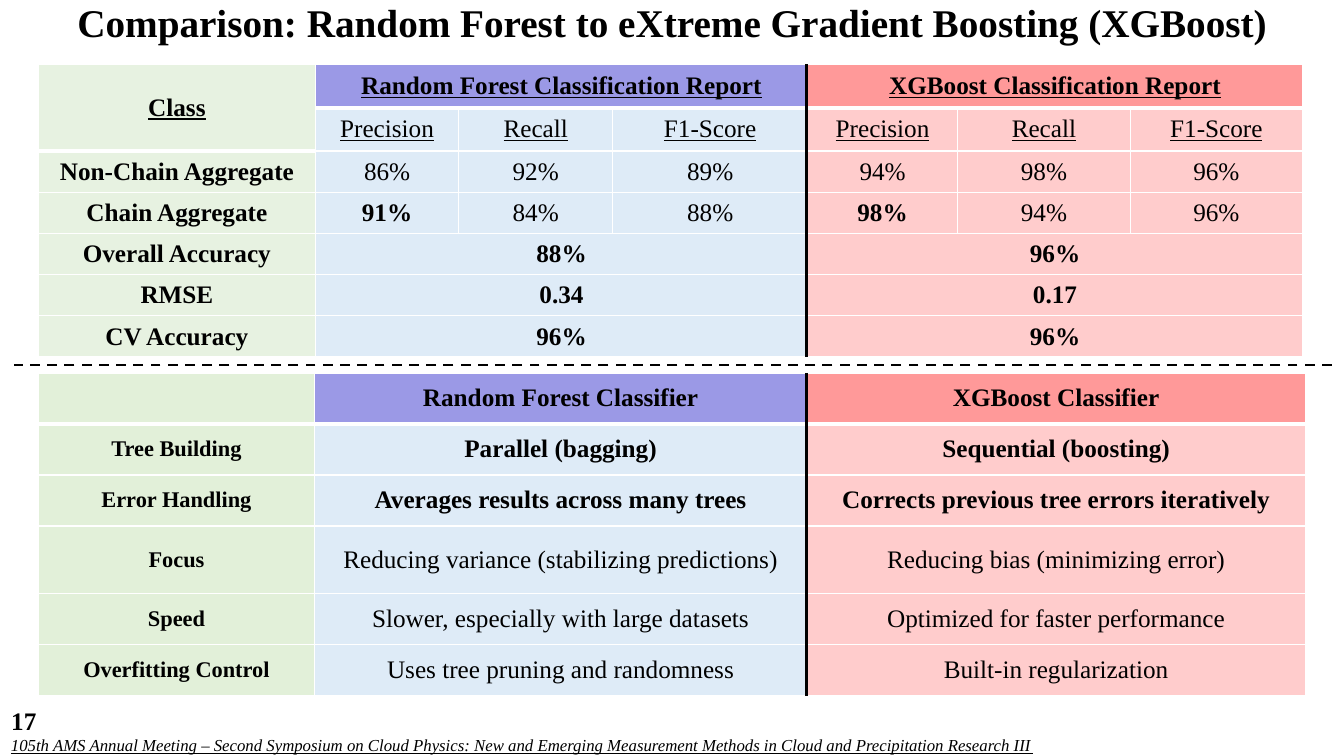
from itertools import product

from lxml import etree
from pptx import Presentation
from pptx import util as u
from pptx.dml.color import RGBColor
from pptx.enum import dml, shapes, text
from pptx.oxml.ns import qn

LEFT, DIVIDER = 2.85, 60.02
GREEN, PALE_GREEN, BLUE = ("C5E0B4", 40), ("E2F0D9", 100), ("DEEBF7", 100)
PURPLE, RED, PINK = ("0700C2", 40), ("FF0000", 40), ("FF0000", 20)
MODELS = ((1, PURPLE, BLUE), (4, RED, PINK))

METRICS = ("Precision", "Recall", "F1-Score")
SCORES = (
    ("Non-Chain Aggregate", ("86%", "92%", "89%", "94%", "98%", "96%")),
    ("Chain Aggregate", ("91%", "84%", "88%", "98%", "94%", "96%")),
)
BEST = ("Chain Aggregate", "Precision")
SUMMARY = (
    ("Overall Accuracy", "88%", "96%"),
    ("RMSE", "0.34", "0.17"),
    ("CV Accuracy", "96%", "96%"),
)
TRAITS = (
    ("", "Random Forest Classifier", "XGBoost Classifier"),
    ("Tree Building", "Parallel (bagging)", "Sequential (boosting)"),
    ("Error Handling", "Averages results across many trees",
     "Corrects previous tree errors iteratively"),
    ("Focus", "Reducing variance (stabilizing predictions)",
     "Reducing bias (minimizing error)"),
    ("Speed", "Slower, especially with large datasets",
     "Optimized for faster performance"),
    ("Overfitting Control", "Uses tree pruning and randomness",
     "Built-in regularization"),
)


def rgb(value):
    return RGBColor.from_string(value)


class Deck:
    """Holds the style and current slide; lengths are percent of its size."""

    font = "Times New Roman"
    ink = "000000"
    rule = "FFFFFF"

    def __init__(self):
        self.prs = Presentation()
        self.prs.slide_width, self.prs.slide_height = u.Inches(13.33), u.Inches(7.5)
        self.s = self.prs.slides.add_slide(self.prs.slide_layouts[6])

    def x(self, share):
        return round(self.prs.slide_width * share / 100)

    def y(self, share):
        return round(self.prs.slide_height * share / 100)

    def put_words(self, tf, words, align="CENTER", size=18, **fmt):
        p = tf.paragraphs[0]
        p.alignment = getattr(text.PP_ALIGN, align)
        r = p.add_run()
        r.text = words
        for name, value in {"name": self.font, "size": u.Pt(size), **fmt}.items():
            setattr(r.font, name, value)
        r.font.color.rgb = rgb(self.ink)
        return p

    def text(self, left, top, width, height, words, anchor="MIDDLE", **fmt):
        tf = self.s.shapes.add_textbox(
            self.x(left), self.y(top), self.x(width), self.y(height)).text_frame
        tf.word_wrap = True
        tf.vertical_anchor = getattr(text.MSO_ANCHOR, anchor)
        return self.put_words(tf, words, **fmt)

    def line(self, x1, y1, x2, y2, width, dash=None):
        sp = self.s.shapes.add_connector(
            shapes.MSO_CONNECTOR.STRAIGHT,
            self.x(x1), self.y(y1), self.x(x2), self.y(y2))
        sp.line.color.rgb = rgb(self.ink)
        sp.line.width = u.Pt(width)
        sp.line.dash_style = dash
        etree.SubElement(sp._element.spPr, qn("a:effectLst"))

    def table(self, left, top, cols, rows):
        table = self.s.shapes.add_table(
            len(rows), len(cols), self.x(left), self.y(top),
            self.x(sum(cols)), self.y(sum(rows))).table
        table.first_row = table.horz_banding = False
        for column, width in zip(table.columns, cols):
            column.width = self.x(width)
        for row, height in zip(table.rows, rows):
            row.height = self.y(height)
        return table

    def cell(self, table, row, col, words, fill, span=(1, 1), heavy=False,
             inset=None, **fmt):
        down, across = span
        for i, j in product(range(row, row + down), range(col, col + across)):
            self.paint(table.cell(i, j), fill, heavy)
        cell = table.cell(row, col)
        if span != (1, 1):
            cell.merge(table.cell(row + down - 1, col + across - 1))
        cell.vertical_anchor = text.MSO_ANCHOR.MIDDLE
        if inset is not None:
            for side in ("left", "top", "right", "bottom"):
                setattr(cell, f"margin_{side}", u.Inches(inset))
        if words:
            self.put_words(cell.text_frame, words, **fmt)

    def paint(self, cell, fill, heavy):
        color, alpha = fill
        tcPr = cell._tc.get_or_add_tcPr()
        for side in "LRTB":
            width = 3 if heavy and side == "B" else 1
            ln = etree.SubElement(tcPr, qn(f"a:ln{side}"), w=str(u.Pt(width)))
            solid = etree.SubElement(ln, qn("a:solidFill"))
            etree.SubElement(solid, qn("a:srgbClr"), val=self.rule)
        cell.fill.solid()
        cell.fill.fore_color.rgb = rgb(color)
        if alpha < 100:
            clr = tcPr.find(qn("a:solidFill")).find(qn("a:srgbClr"))
            etree.SubElement(clr, qn("a:alpha"), val=str(alpha * 1000))


def add_report(deck):
    table = deck.table(LEFT, 8.53,
                       (20.63, 10.65, 11.48, 14.48, 11.18, 12.83, 12.83),
                       [5.73] * 2 + [5.45] * 5)
    deck.cell(table, 0, 0, "Class", GREEN, (2, 1), True, bold=True, underline=True)
    for (col, head, body), model in zip(MODELS, ("Random Forest", "XGBoost")):
        deck.cell(table, 0, col, f"{model} Classification Report", head, (1, 3),
                  True, bold=True, underline=True)
        for k, metric in enumerate(METRICS):
            deck.cell(table, 1, col + k, metric, body, underline=True)
            for row, (label, values) in enumerate(SCORES, 2):
                deck.cell(table, row, col + k, values[col - 1 + k], body,
                          bold=(label, metric) == BEST)
    for row, (label, *values) in enumerate(SUMMARY, 4):
        for (col, _, body), value in zip(MODELS, values):
            deck.cell(table, row, col, value, body, (1, 3), bold=True)
    for row, (label, *_) in enumerate(SCORES + SUMMARY, 2):
        deck.cell(table, row, 0, label, GREEN, bold=True)
    deck.line(DIVIDER, 8.53, DIVIDER, 47.2, 2.5)


def add_traits(deck):
    table = deck.table(LEFT, 49.33, (20.56, 36.61, 37.13),
                       (6.75, 6.75, 6.75, 8.93, 6.75, 6.75))
    for row, words in enumerate(TRAITS):
        fills = (PALE_GREEN, BLUE, PINK) if row else (PALE_GREEN, PURPLE, RED)
        for col, fill in enumerate(fills):
            deck.cell(table, row, col, words[col], fill, heavy=row == 0,
                      inset=0.02, size=18 if col else 16,
                      bold=col == 0 or row < 3)
    deck.line(DIVIDER, 49.33, DIVIDER, 92, 2.5)


def main():
    deck = Deck()
    title = deck.text(
        LEFT, -1.87, 94.3, 10.4,
        "Comparison: Random Forest to eXtreme Gradient Boosting (XGBoost)",
        size=28, bold=True)
    title.line_spacing = 0.9
    add_report(deck)
    add_traits(deck)
    deck.line(99.1, 48.27, 1.05, 48.27, 1.75, dml.MSO_LINE.DASH)
    deck.text(0, 92.67, 3.45, 5.33, "17", align="RIGHT", bold=True)
    deck.text(
        0.08, 96.53, 90.47, 4,
        "105th AMS Annual Meeting – Second Symposium on Cloud Physics: New and "
        "Emerging Measurement Methods in Cloud and Precipitation Research III",
        anchor="TOP", align="LEFT", size=12, italic=True, underline=True)
    deck.prs.save("out.pptx")


if __name__ == "__main__":
    main()
